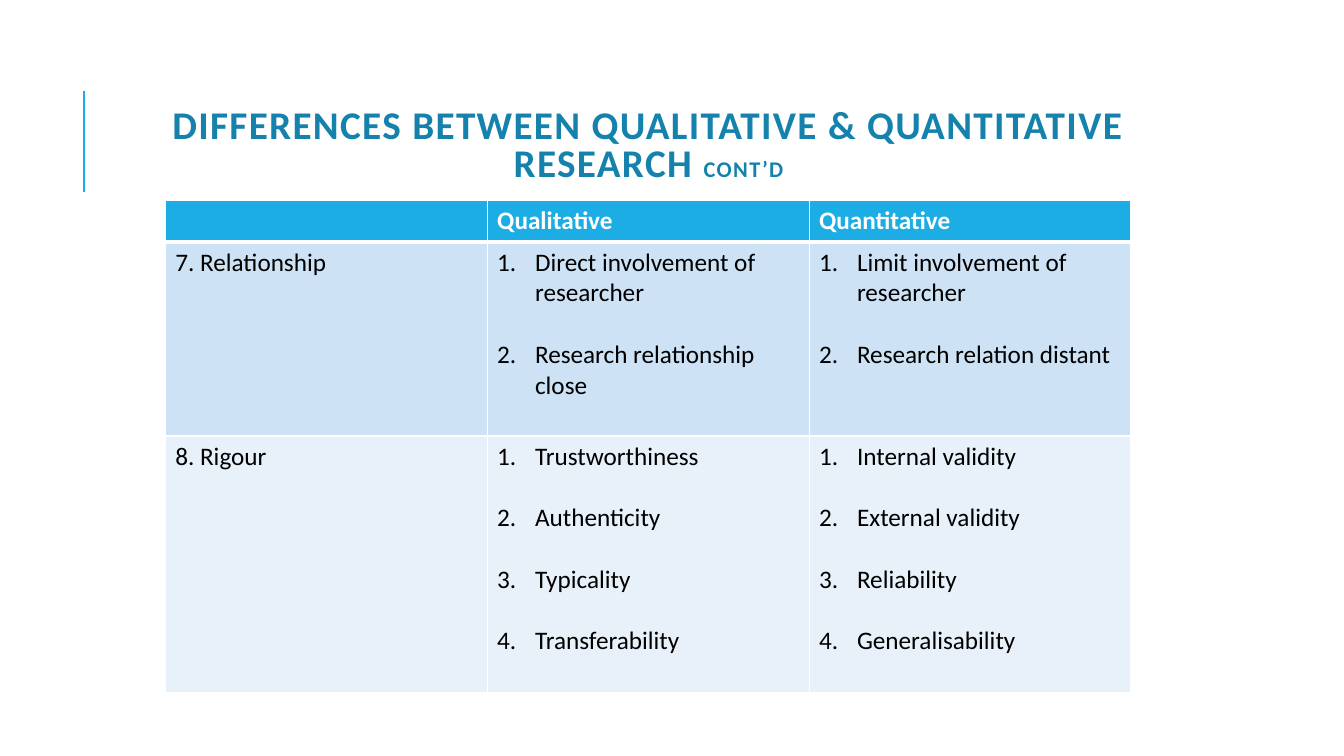
"""Build the slide on differences between qualitative and quantitative research."""
from lxml import etree
from pptx import Presentation
from pptx.dml.color import RGBColor
from pptx.enum.shapes import MSO_CONNECTOR
from pptx.enum.text import MSO_ANCHOR, PP_ALIGN
from pptx.oxml.ns import qn
from pptx.util import Pt

STRAIGHT = MSO_CONNECTOR.STRAIGHT
MIDDLE = MSO_ANCHOR.MIDDLE
CENTER = PP_ALIGN.CENTER

BLUE = RGBColor(0x1C, 0xAD, 0xE4)
DEEP = RGBColor(0x14, 0x82, 0xAC)
MID = RGBColor(0xCD, 0xE3, 0xF5)
PALE = RGBColor(0xE8, 0xF1, 0xFA)
WHITE = RGBColor(0xFF, 0xFF, 0xFF)
BLACK = RGBColor(0x00, 0x00, 0x00)

FONT = "Calibri"
BODY = {"name": FONT, "size": Pt(18), "bold": False}
HEAD = {**BODY, "bold": True}
TITLE = {**HEAD, "size": Pt(28)}
SMALL = {**HEAD, "size": Pt(16)}

INDENT = Pt(27)
GAP = Pt(22)
ROWS = [
    (29.5, BLUE, ["", "Qualitative", "Quantitative"]),
    (138.5, MID, [
        "7. Relationship",
        ["Direct involvement of researcher", "Research relationship close"],
        ["Limit involvement of researcher", "Research relation distant"],
    ]),
    (183, PALE, [
        "8. Rigour",
        ["Trustworthiness", "Authenticity", "Typicality", "Transferability"],
        ["Internal validity", "External validity", "Reliability", "Generalisability"],
    ]),
]


def style(item, values):
    """Set each named value on an item."""
    for name, value in values.items():
        setattr(item, name, value)


def add_run(para, text, form, color):
    """Add a run of formatted text and return it."""
    run = para.add_run()
    run.text = text
    style(run.font, form)
    run.font.color.rgb = color
    return run


def add_title(slide):
    """Add the centred two-part heading."""
    box = slide.shapes.add_textbox(Pt(80.5), Pt(46), Pt(765.5), Pt(118))
    frame = box.text_frame
    style(frame, {"word_wrap": True, "vertical_anchor": MIDDLE})
    para = frame.paragraphs[0]
    style(para, {"alignment": CENTER, "line_spacing": 0.8})
    parts = [
        ("DIFFERENCES BETWEEN QUALITATIVE & QUANTITATIVE RESEARCH ", TITLE),
        ("CONT’D", SMALL),
    ]
    for text, form in parts:
        run = add_run(para, text, form, DEEP)
        run.font._element.set("spc", "100")


def add_rule(slide):
    """Add the upright accent line."""
    rule = slide.shapes.add_connector(STRAIGHT, Pt(60), Pt(137), Pt(60), Pt(65))
    rule.line.color.rgb = BLUE
    rule.line.width = Pt(1.5)
    etree.SubElement(rule._element.spPr, qn("a:effectLst"))


def add_edges(cell, widths):
    """Draw white borders with the given width for each side."""
    props = cell._tc.get_or_add_tcPr()
    for side, width in widths.items():
        edge = etree.SubElement(props, qn(f"a:ln{side}"), w=str(Pt(width)))
        fill = etree.SubElement(edge, qn("a:solidFill"))
        etree.SubElement(fill, qn("a:srgbClr"), val=str(WHITE))


def number(para):
    """Give a paragraph a hanging automatic number."""
    props = para._p.get_or_add_pPr()
    props.set("marL", str(INDENT))
    props.set("indent", str(-INDENT))
    etree.SubElement(props, qn("a:buFont"), typeface="+mj-lt")
    etree.SubElement(props, qn("a:buAutoNum"), type="arabicPeriod")


def fill_cell(cell, content, form, color):
    """Write plain text or a numbered list into a cell."""
    frame = cell.text_frame
    if isinstance(content, str):
        if content:
            add_run(frame.paragraphs[0], content, form, color)
        return
    for index, text in enumerate(content):
        para = frame.add_paragraph() if index else frame.paragraphs[0]
        if index:
            para.space_before = GAP
        number(para)
        add_run(para, text, form, color)


def add_grid(slide):
    """Add the comparison table."""
    total = sum(height for height, _, _ in ROWS)
    frame = slide.shapes.add_table(3, 3, Pt(118), Pt(143.5), Pt(690), Pt(total))
    table = frame.table
    style(table, {"first_row": True, "horz_banding": False})
    for row, (height, shade, texts) in enumerate(ROWS):
        table.rows[row].height = Pt(height)
        form, color = (BODY, BLACK) if row else (HEAD, WHITE)
        edges = {"L": 1, "R": 1, "T": 3 if row == 1 else 1, "B": 1 if row else 3}
        for col, content in enumerate(texts):
            cell = table.cell(row, col)
            add_edges(cell, edges)
            cell.fill.solid()
            cell.fill.fore_color.rgb = shade
            fill_cell(cell, content, form, color)


def main():
    """Build and save the slide."""
    deck = Presentation()
    style(deck, {"slide_width": Pt(960), "slide_height": Pt(540)})
    slide = deck.slides.add_slide(deck.slide_layouts[6])
    add_rule(slide)
    add_title(slide)
    add_grid(slide)
    deck.save("out.pptx")


if __name__ == "__main__":
    main()
